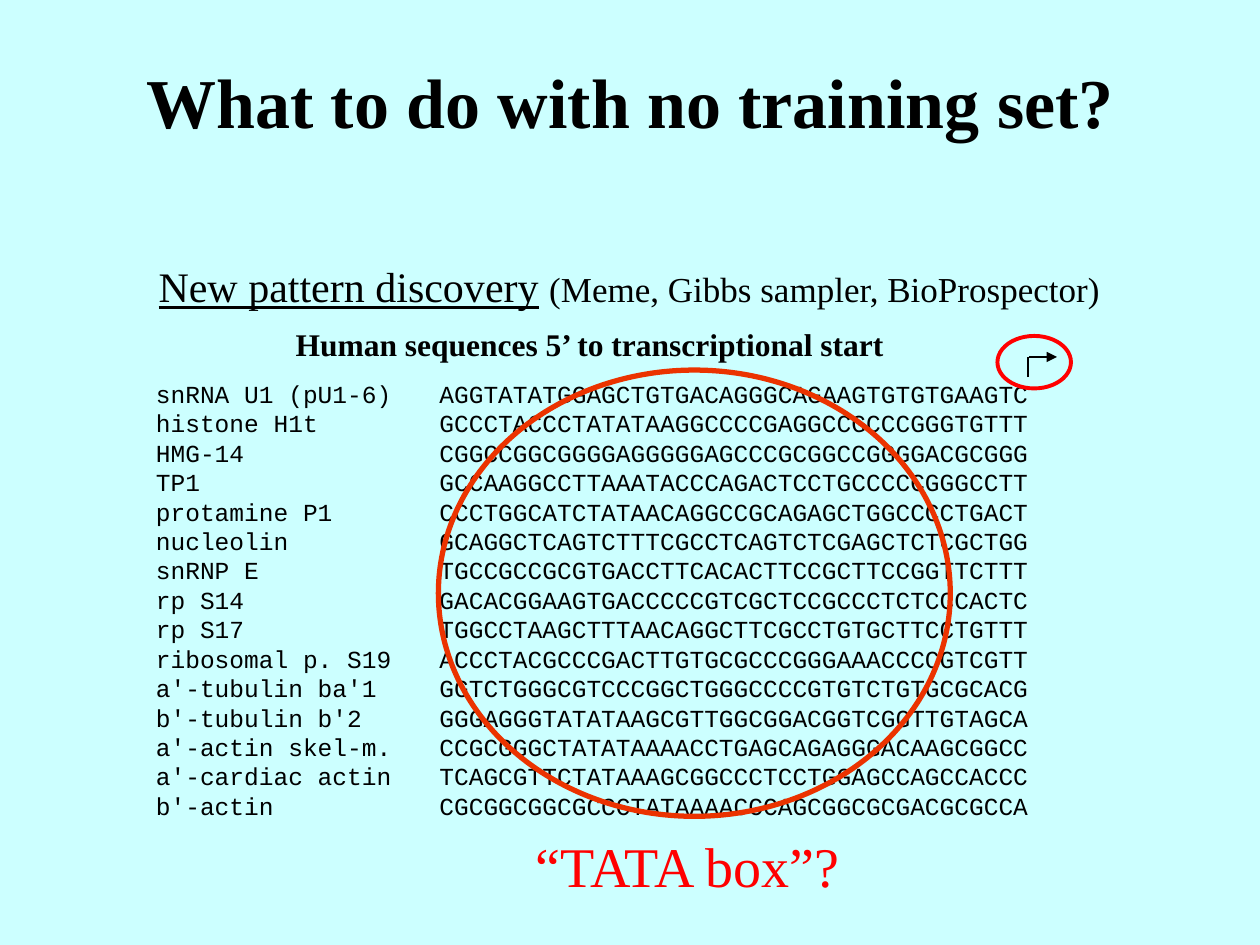
from dataclasses import dataclass

from lxml.etree import SubElement
from pptx import Presentation
from pptx.dml.color import RGBColor
from pptx.enum.shapes import MSO_CONNECTOR, MSO_SHAPE
from pptx.enum.text import PP_ALIGN
from pptx.oxml.ns import qn
from pptx.util import Pt

SERIF = "Times New Roman"
MONO = "Courier New"
BLACK = "000000"
RED = "FF0000"
SEQUENCE_TAB = 162


@dataclass
class Box:
    left: float
    top: float
    width: float
    height: float


@dataclass
class Style:
    size: float
    font: str = SERIF
    color: str = BLACK
    bold: bool = False
    underline: bool = False


@dataclass
class Label:
    box: Box
    text: str
    style: Style


@dataclass
class Ring:
    box: Box
    color: str
    weight: float


@dataclass
class Gene:
    name: str
    sequence: str


LABELS = [
    Label(Box(66, 30, 588, 55.5), "What to do with no training set?", Style(40, bold=True)),
    Label(Box(90.5, 182, 493, 29), "Human sequences 5’ to transcriptional start", Style(18, bold=True)),
    Label(Box(282, 471.5, 222, 46), "“TATA box”?", Style(32, color=RED)),
]
PATTERN_RUNS = [
    ("New pattern discovery", Style(24, underline=True)),
    (" ", Style(24)),
    ("(Meme, Gibbs sampler, BioProspector)", Style(20)),
]
RINGS = [
    Ring(Box(250.5, 211.5, 292.5, 255), "EB3300", 3),
    Ring(Box(570, 192, 42, 30), RED, 2.25),
]
GENES = [
    Gene("snRNA U1 (pU1-6)", "AGGTATATGGAGCTGTGACAGGGCAGAAGTGTGTGAAGTC"),
    Gene("histone H1t", "GCCCTACCCTATATAAGGCCCCGAGGCCGCCCGGGTGTTT"),
    Gene("HMG-14", "CGGCCGGCGGGGAGGGGGAGCCCGCGGCCGGGGACGCGGG"),
    Gene("TP1", "GCCAAGGCCTTAAATACCCAGACTCCTGCCCCCGGGCCTT"),
    Gene("protamine P1", "CCCTGGCATCTATAACAGGCCGCAGAGCTGGCCCCTGACT"),
    Gene("nucleolin", "GCAGGCTCAGTCTTTCGCCTCAGTCTCGAGCTCTCGCTGG"),
    Gene("snRNP E", "TGCCGCCGCGTGACCTTCACACTTCCGCTTCCGGTTCTTT"),
    Gene("rp S14", "GACACGGAAGTGACCCCCGTCGCTCCGCCCTCTCCCACTC"),
    Gene("rp S17", "TGGCCTAAGCTTTAACAGGCTTCGCCTGTGCTTCCTGTTT"),
    Gene("ribosomal p. S19", "ACCCTACGCCCGACTTGTGCGCCCGGGAAACCCCGTCGTT"),
    Gene("a'-tubulin ba'1", "GGTCTGGGCGTCCCGGCTGGGCCCCGTGTCTGTGCGCACG"),
    Gene("b'-tubulin b'2", "GGGAGGGTATATAAGCGTTGGCGGACGGTCGGTTGTAGCA"),
    Gene("a'-actin skel-m.", "CCGCGGGCTATATAAAACCTGAGCAGAGGGACAAGCGGCC"),
    Gene("a'-cardiac actin", "TCAGCGTTCTATAAAGCGGCCCTCCTGGAGCCAGCCACCC"),
    Gene("b'-actin", "CGCGGCGGCGCCCTATAAAACCCAGCGGCGCGACGCGCCA"),
]


def rgb(value: str) -> RGBColor:
    return RGBColor.from_string(value)


def place(box: Box) -> tuple:
    return Pt(box.left), Pt(box.top), Pt(box.width), Pt(box.height)


def format_run(r, style: Style) -> None:
    r.font.name = style.font
    r.font.size = Pt(style.size)
    r.font.bold = style.bold
    r.font.underline = style.underline
    r.font.color.rgb = rgb(style.color)


def add_text_frame(s, box: Box):
    tf = s.shapes.add_textbox(*place(box)).text_frame
    tf.word_wrap = True
    return tf


def add_label(s, label: Label) -> None:
    tf = add_text_frame(s, label.box)
    tf.text = label.text
    p = tf.paragraphs[0]
    p.alignment = PP_ALIGN.CENTER
    format_run(p.runs[0], label.style)


def add_pattern_line(s, box: Box) -> None:
    p = add_text_frame(s, box).paragraphs[0]
    for text, style in PATTERN_RUNS:
        r = p.add_run()
        r.text = text
        format_run(r, style)


def add_sequences(s, box: Box) -> None:
    tf = add_text_frame(s, box)
    tf.text = "\n".join(f"{gene.name}\t{gene.sequence}" for gene in GENES)
    for p in tf.paragraphs:
        tabs = SubElement(p._p.get_or_add_pPr(), qn("a:tabLst"))
        SubElement(tabs, qn("a:tab"), pos=str(Pt(SEQUENCE_TAB)), algn="l")
        format_run(p.runs[0], Style(14, font=MONO))


def add_ring(s, ring: Ring) -> None:
    sp = s.shapes.add_shape(MSO_SHAPE.OVAL, *place(ring.box))
    sp.shadow.inherit = False
    sp.fill.background()
    sp.line.color.rgb = rgb(ring.color)
    sp.line.width = Pt(ring.weight)


def add_line(s, x1: float, y1: float, x2: float, y2: float, arrow: bool = False) -> None:
    line = s.shapes.add_connector(MSO_CONNECTOR.STRAIGHT, Pt(x1), Pt(y1), Pt(x2), Pt(y2))
    line.line.color.rgb = rgb(BLACK)
    line.line.width = Pt(0.75)
    if arrow:
        SubElement(line.line._get_or_add_ln(), qn("a:tailEnd"), type="triangle")
    SubElement(line._element.spPr, qn("a:effectLst"))


def main() -> None:
    prs = Presentation()
    prs.slide_width, prs.slide_height = Pt(720), Pt(540)
    s = prs.slides.add_slide(prs.slide_layouts[6])
    s.background.fill.solid()
    s.background.fill.fore_color.rgb = rgb("CCFFFF")
    add_pattern_line(s, Box(83.5, 145.5, 572, 36))
    add_sequences(s, Box(82, 213, 580, 258.5))
    add_line(s, 587.5, 215.5, 587.5, 204)
    add_line(s, 588, 204, 604, 204, arrow=True)
    for ring in RINGS:
        add_ring(s, ring)
    for label in LABELS:
        add_label(s, label)
    prs.save("out.pptx")


if __name__ == "__main__":
    main()
